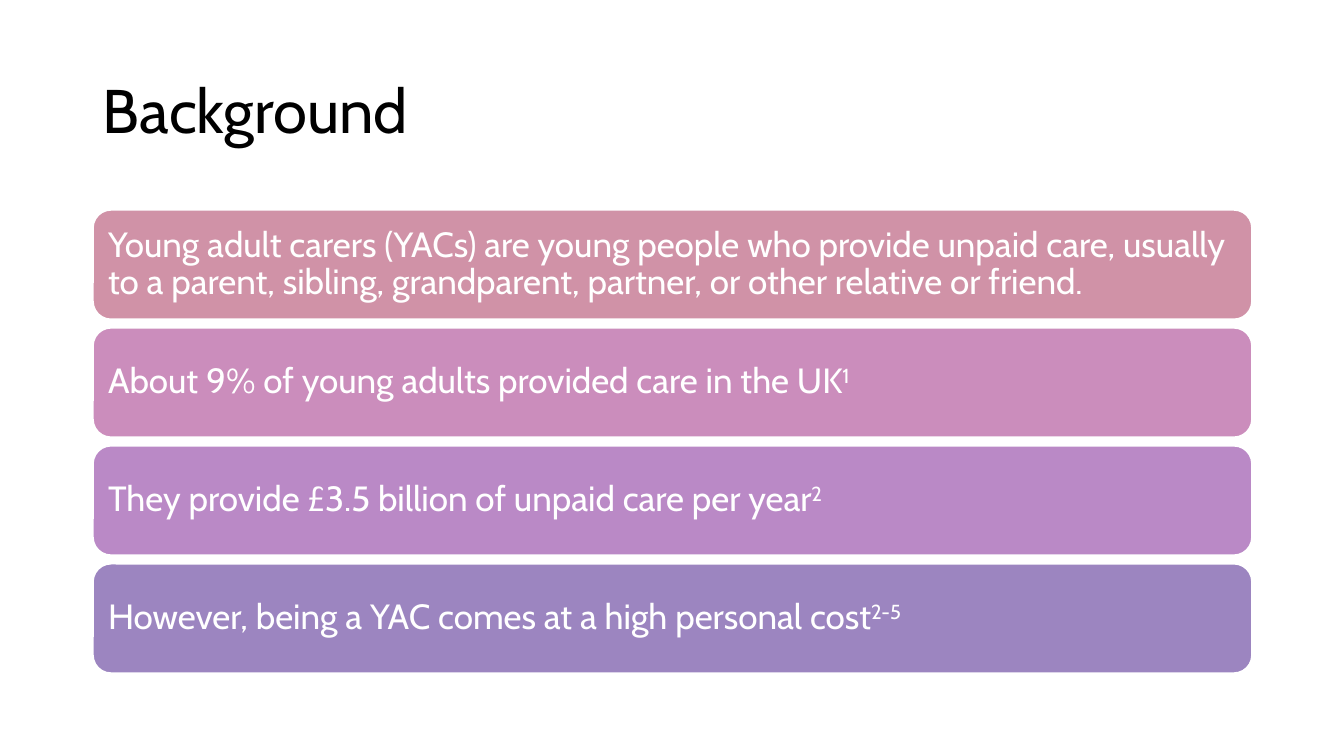
from pptx import Presentation
from pptx.dml.color import RGBColor
from pptx.enum.shapes import MSO_SHAPE
from pptx.enum.text import MSO_ANCHOR, PP_ALIGN
from pptx.util import Pt

EMU_PER_PX = 9144
COLORS = {
    "black": "000000",
    "white": "FFFFFF",
    "rose": "D092A7",
    "pink": "CB8DBC",
    "orchid": "BA89C6",
    "violet": "9C85C0",
}
FONT = "Cabin"
LEFT, WIDTH = 92, 1150
FIRST_TOP, BAR_HEIGHT, BAR_PITCH = 208, 109, 117
FACTS = [
    ("rose", "Young adult carers (YACs) are young people who provide unpaid care, "
             "usually to a parent, sibling, grandparent, partner, or other relative or friend.", ""),
    ("pink", "About 9% of young adults provided care in the UK", "1"),
    ("orchid", "They provide £3.5 billion of unpaid care per year", "2"),
    ("violet", "However, being a YAC comes at a high personal cost", "2-5"),
]


def px(*lengths):
    """Turn pixel lengths into EMU."""
    return [length * EMU_PER_PX for length in lengths]


def color(name):
    """Look up a named colour."""
    return RGBColor.from_string(COLORS[name])


def write(frame, text, size, color_name, citation=""):
    """Write one left-aligned paragraph with an optional superscript citation."""
    frame.word_wrap = True
    frame.vertical_anchor = MSO_ANCHOR.MIDDLE
    paragraph = frame.paragraphs[0]
    paragraph.alignment = PP_ALIGN.LEFT
    paragraph.line_spacing = 0.9
    paragraph.font.name = FONT
    paragraph.font.size = Pt(size)
    paragraph.font.color.rgb = color(color_name)
    paragraph.add_run().text = text
    if citation:
        reference = paragraph.add_run()
        reference.text = citation
        reference._r.get_or_add_rPr().set("baseline", "30000")


def add_title(slide, text):
    """Add the slide heading."""
    heading = slide.shapes.add_textbox(*px(LEFT, 40, WIDTH, 145))
    write(heading.text_frame, text, 44, "black")


def add_fact(slide, top, fill, text, citation):
    """Add one rounded bar holding a fact."""
    bar = slide.shapes.add_shape(MSO_SHAPE.ROUNDED_RECTANGLE, *px(LEFT, top, WIDTH, BAR_HEIGHT))
    bar.shadow.inherit = False
    bar.fill.solid()
    bar.fill.fore_color.rgb = color(fill)
    bar.line.color.rgb = color("white")
    bar.line.width = Pt(1.5)
    frame = bar.text_frame
    frame.margin_left, frame.margin_top, frame.margin_right, frame.margin_bottom = px(10, 10, 10, 10)
    write(frame, text, 25, "white", citation)


def main():
    """Build and save the background slide."""
    deck = Presentation()
    deck.slide_width, deck.slide_height = px(1333, 750)
    slide = deck.slides.add_slide(deck.slide_layouts[6])
    add_title(slide, "Background")
    for row, (fill, text, citation) in enumerate(FACTS):
        add_fact(slide, FIRST_TOP + row * BAR_PITCH, fill, text, citation)
    deck.save("out.pptx")


if __name__ == "__main__":
    main()
